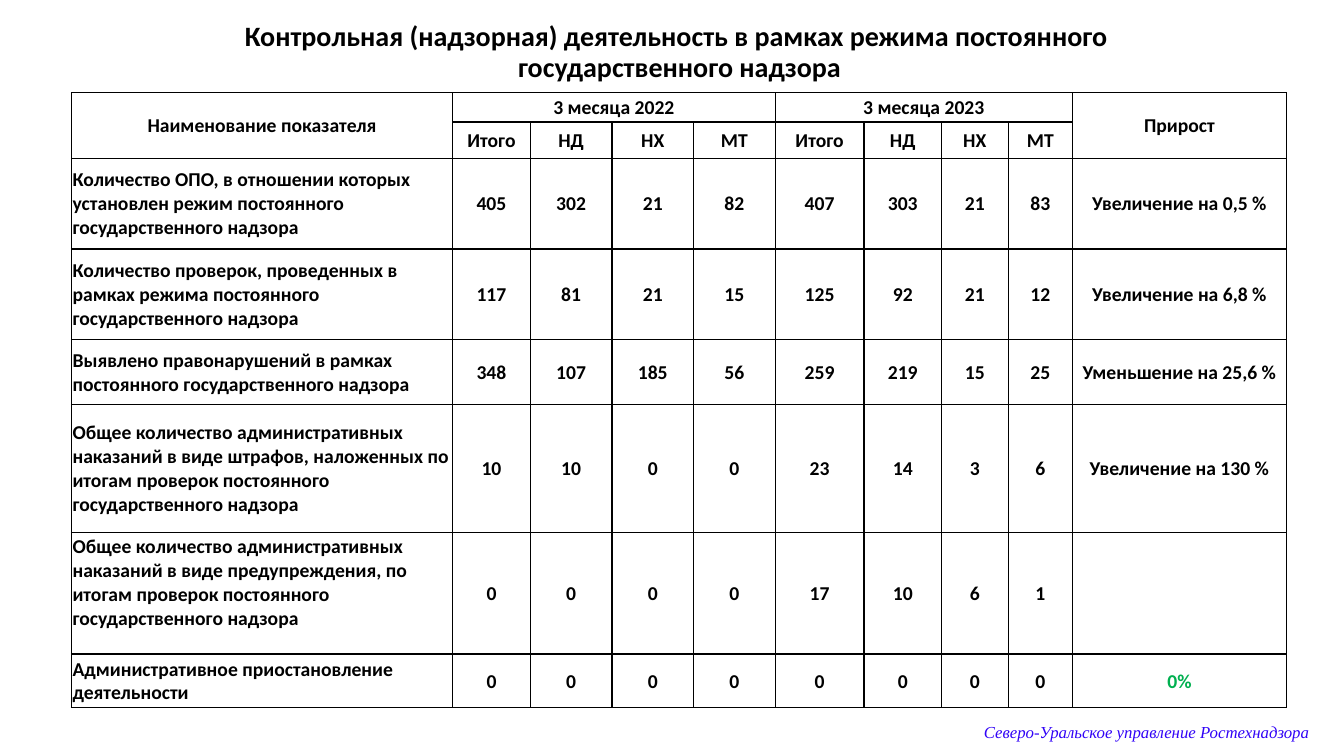
from dataclasses import dataclass

from lxml import etree
from pptx import Presentation
from pptx.dml.color import RGBColor
from pptx.enum.text import MSO_ANCHOR, PP_ALIGN
from pptx.oxml.ns import qn
from pptx.util import Inches, Pt

LEFT, CENTER = PP_ALIGN.LEFT, PP_ALIGN.CENTER
MIDDLE = MSO_ANCHOR.MIDDLE


@dataclass(frozen=True)
class Theme:
    body_font: str = "Calibri"
    footer_font: str = "Times New Roman"
    title_size: int = 20
    table_size: int = 14
    footer_size: int = 12
    ink: str = "000000"
    paper: str = "FFFFFF"
    neutral: str = "00B050"
    footer_ink: str = "3103F7"
    border_width: int = 1


TITLE = ("Контрольная (надзорная) деятельность в рамках режима постоянного \n"
         "государственного надзора")
FOOTER = "Северо-Уральское управление Ростехнадзора"

COLUMN_WIDTHS = [3.78, 0.77, 0.81, 0.81, 0.81, 0.88, 0.77, 0.66, 0.64, 2.12]
ROW_HEIGHTS = [0.29, 0.36, 0.9, 0.9, 0.64, 1.27, 1.21, 0.53]
WARNINGS_ROW = 6
BRANCHES = ["Итого", "НД", "НХ", "МТ"]
ROWS = [
    ["Наименование показателя", "3 месяца 2022", "", "", "",
     "3 месяца 2023", "", "", "", "Прирост"],
    ["", *BRANCHES, *BRANCHES, ""],
    ["Количество ОПО, в отношении которых установлен режим постоянного "
     "государственного надзора",
     405, 302, 21, 82, 407, 303, 21, 83, "Увеличение на 0,5 %"],
    ["Количество проверок, проведенных в рамках режима постоянного "
     "государственного надзора",
     117, 81, 21, 15, 125, 92, 21, 12, "Увеличение на 6,8 %"],
    ["Выявлено правонарушений в рамках постоянного государственного надзора",
     348, 107, 185, 56, 259, 219, 15, 25, "Уменьшение на 25,6 %"],
    ["Общее количество административных наказаний в виде штрафов, "
     "наложенных по итогам проверок постоянного государственного надзора",
     10, 10, 0, 0, 23, 14, 3, 6, "Увеличение на 130 %"],
    ["Общее количество административных наказаний в виде предупреждения, "
     "по итогам проверок постоянного государственного надзора",
     0, 0, 0, 0, 17, 10, 6, 1, ""],
    ["Административное приостановление деятельности",
     0, 0, 0, 0, 0, 0, 0, 0, "0%"],
]
# First and last cell of each merged header: row, column, row, column
MERGES = [(0, 0, 1, 0), (0, 1, 0, 4), (0, 5, 0, 8), (0, 9, 1, 9)]


class SlideBuilder:
    def __init__(self, page, theme):
        self.page = page
        self.theme = theme

    def format_para(self, para, size, color, font, align, bold=False, italic=False):
        para.alignment = align
        for span in para.runs:
            span.font.name = font
            span.font.size = Pt(size)
            span.font.bold = bold
            span.font.italic = italic
            span.font.color.rgb = RGBColor.from_string(color)

    def text(self, content, left, top, width, height, **style):
        box = self.page.shapes.add_textbox(
            Inches(left), Inches(top), Inches(width), Inches(height))
        box.text_frame.word_wrap = True
        box.text_frame.vertical_anchor = MIDDLE
        para = box.text_frame.paragraphs[0]
        para.text = content
        self.format_para(para, **style)
        return para

    def border(self, cell):
        properties = cell._tc.get_or_add_tcPr()
        for position, side in enumerate(("lnL", "lnR", "lnT", "lnB")):
            line = etree.Element(qn(f"a:{side}"), w=str(Pt(self.theme.border_width)))
            fill = etree.SubElement(line, qn("a:solidFill"))
            etree.SubElement(fill, qn("a:srgbClr"), val=self.theme.ink)
            properties.insert(position, line)

    def cell(self, cell, content, align, color):
        cell.margin_left = cell.margin_right = cell.margin_top = Inches(0.01)
        cell.margin_bottom = 0
        cell.vertical_anchor = MIDDLE
        cell.fill.solid()
        cell.fill.fore_color.rgb = RGBColor.from_string(self.theme.paper)
        self.border(cell)
        para = cell.text_frame.paragraphs[0]
        if content:
            para.text = content
        self.format_para(para, self.theme.table_size, color,
                         self.theme.body_font, align, bold=True)

    def table(self, rows, left, top, widths, heights, merges):
        table = self.page.shapes.add_table(
            len(rows), len(widths), Inches(left), Inches(top),
            Inches(sum(widths)), Inches(sum(heights))).table
        table.first_row = table.horz_banding = False
        for column, width in zip(table.columns, widths):
            column.width = Inches(width)
        for row, height in zip(table.rows, heights):
            row.height = Inches(height)
        for r, values in enumerate(rows):
            for c, value in enumerate(values):
                align = LEFT if c == 0 and r > 1 else CENTER
                color = self.theme.neutral if value == "0%" else self.theme.ink
                self.cell(table.cell(r, c), str(value), align, color)
        for r1, c1, r2, c2 in merges:
            table.cell(r1, c1).merge(table.cell(r2, c2))
        return table


def main():
    deck = Presentation()
    deck.slide_width, deck.slide_height = Inches(13.33), Inches(7.5)
    theme = Theme()
    builder = SlideBuilder(deck.slides.add_slide(deck.slide_layouts[6]), theme)

    # Title
    title = builder.text(TITLE, 0.71, 0.13, 12.06, 0.79, size=theme.title_size,
                         color=theme.ink, font=theme.body_font, align=CENTER, bold=True)
    title.line_spacing = 0.9

    # Department name
    builder.text(FOOTER, 9.66, 7.01, 3.52, 0.5, size=theme.footer_size,
                 color=theme.footer_ink, font=theme.footer_font, align=LEFT, italic=True)

    # Indicators; the warnings label sits above the middle of its row
    table = builder.table(ROWS, 0.71, 0.92, COLUMN_WIDTHS, ROW_HEIGHTS, MERGES)
    table.cell(WARNINGS_ROW, 0).margin_bottom = Inches(0.22)

    deck.save("out.pptx")


if __name__ == "__main__":
    main()
